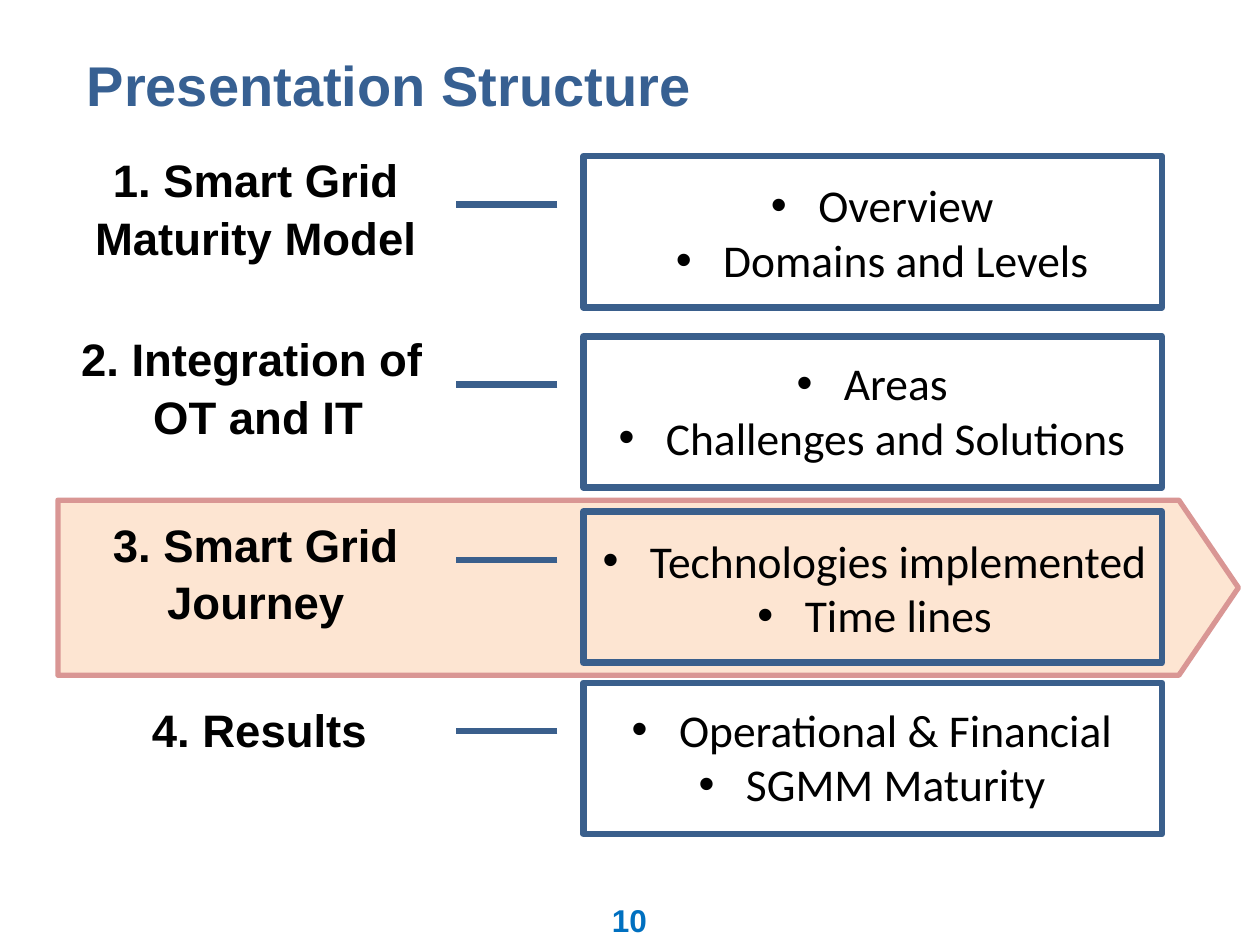
import pptx
import pptx.util
import pptx.dml.color
import pptx.enum.shapes
import pptx.enum.text
import pptx.oxml
import pptx.oxml.ns

Pt = pptx.util.Pt
KIND = pptx.enum.shapes.MSO_SHAPE
ALIGN = pptx.enum.text.PP_ALIGN
ANCHOR = pptx.enum.text.MSO_ANCHOR

# Content: label (left, top, lines), box top, bullets (left, top, width, items)
TITLE = "Presentation Structure"
PAGE = "10"
ROWS = [
    ((13, 82, ["1. Smart Grid Maturity Model"]), 89.3,
     (341.3, 97.9, 316.8, ["Overview", "Domains and Levels"])),
    ((14.4, 184.3, ["2. Integration of ", "OT and IT"]), 192.2,
     (325.4, 199.4, 337, ["Areas", "Challenges and Solutions"])),
    ((13, 290.2, ["3. Smart Grid Journey"]), 292.3,
     (326.9, 301, 337, ["Technologies implemented", "Time lines"])),
    ((15.1, 396, ["4. Results"]), 390.2,
     (325.4, 397.4, 337, ["Operational & Financial", "SGMM Maturity"])),
]

THEME = {
    "head": {"size": 32, "font": "Arial", "color": "376092", "bold": True},
    "label": {"size": 26, "font": "Arial", "color": "000000", "bold": True},
    "item": {"size": 26, "font": "Calibri", "color": "000000", "bold": False},
    "page": {"size": 18, "font": "Arial", "color": "0070C0", "bold": True},
    "box": "3A5F8C",
    "band": "FAC090",
    "edge": "D99694",
}


def paint(color):
    return pptx.dml.color.RGBColor.from_string(color)


def add_text(slide, area, lines, style, align=ALIGN.CENTER,
             anchor=ANCHOR.TOP, space=None, dots=False):
    frame = slide.shapes.add_textbox(*map(Pt, area)).text_frame
    frame.word_wrap = True
    frame.vertical_anchor = anchor
    look = THEME[style]
    for i, line in enumerate(lines):
        para = frame.paragraphs[0] if i == 0 else frame.add_paragraph()
        para.alignment = align
        if space:
            para.line_spacing = space
        if dots:
            add_dot(para)
        run = para.add_run()
        run.text = line
        run.font.size = Pt(look["size"])
        run.font.name = look["font"]
        run.font.bold = look["bold"]
        run.font.color.rgb = paint(look["color"])


def add_dot(para):
    props = para._p.get_or_add_pPr()
    props.set("marL", str(Pt(36)))
    props.set("indent", str(Pt(-27)))
    for tag, key, val in (("buFont", "typeface", "Arial"),
                          ("buChar", "char", "•")):
        part = pptx.oxml.parse_xml(
            f'<a:{tag} {pptx.oxml.ns.nsdecls("a")} {key}="{val}"/>')
        props.append(part)


def add_shape(slide, kind, area, adjust, color, width):
    shape = slide.shapes.add_shape(kind, *map(Pt, area))
    shape.shadow.inherit = False
    for i, val in enumerate(adjust):
        shape.adjustments[i] = val
    shape.fill.background()
    shape.line.color.rgb = paint(color)
    shape.line.width = Pt(width)
    return shape


def add_band(slide):
    band = add_shape(slide, KIND.PENTAGON, (33.1, 285.8, 674.6, 100.1),
                     [0.34], THEME["edge"], 3)
    band.fill.solid()
    band.fill.fore_color.rgb = paint(THEME["band"])
    tone = band._element.spPr.find(".//" + pptx.oxml.ns.qn("a:srgbClr"))
    tone.append(pptx.oxml.parse_xml(
        f'<a:alpha {pptx.oxml.ns.nsdecls("a")} val="40000"/>'))


def add_row(slide, label, top, items):
    left, y, lines = label
    add_text(slide, (left, y, 266.4, 72), lines, "label", space=1.05)
    # Callout box with its line to the label
    add_shape(slide, KIND.LINE_CALLOUT_1, (333.4, top, 330.5, 86.4),
              [0.32, -0.045, 0.32, -0.22], THEME["box"], 3.75)
    left, y, width, lines = items
    add_text(slide, (left, y, width, 72), lines, "item", dots=True)


def main():
    deck = pptx.Presentation()
    deck.slide_width, deck.slide_height = Pt(720), Pt(540)
    slide = deck.slides.add_slide(deck.slide_layouts[6])
    # Title and page number
    add_text(slide, (42.5, 20, 648, 56.2), [TITLE], "head",
             ALIGN.LEFT, ANCHOR.MIDDLE)
    add_text(slide, (275.8, 511.2, 167.8, 28.8), [PAGE], "page",
             anchor=ANCHOR.MIDDLE)
    # Current step, then all rows on top
    add_band(slide)
    for row in ROWS:
        add_row(slide, *row)
    deck.save("out.pptx")


if __name__ == "__main__":
    main()
